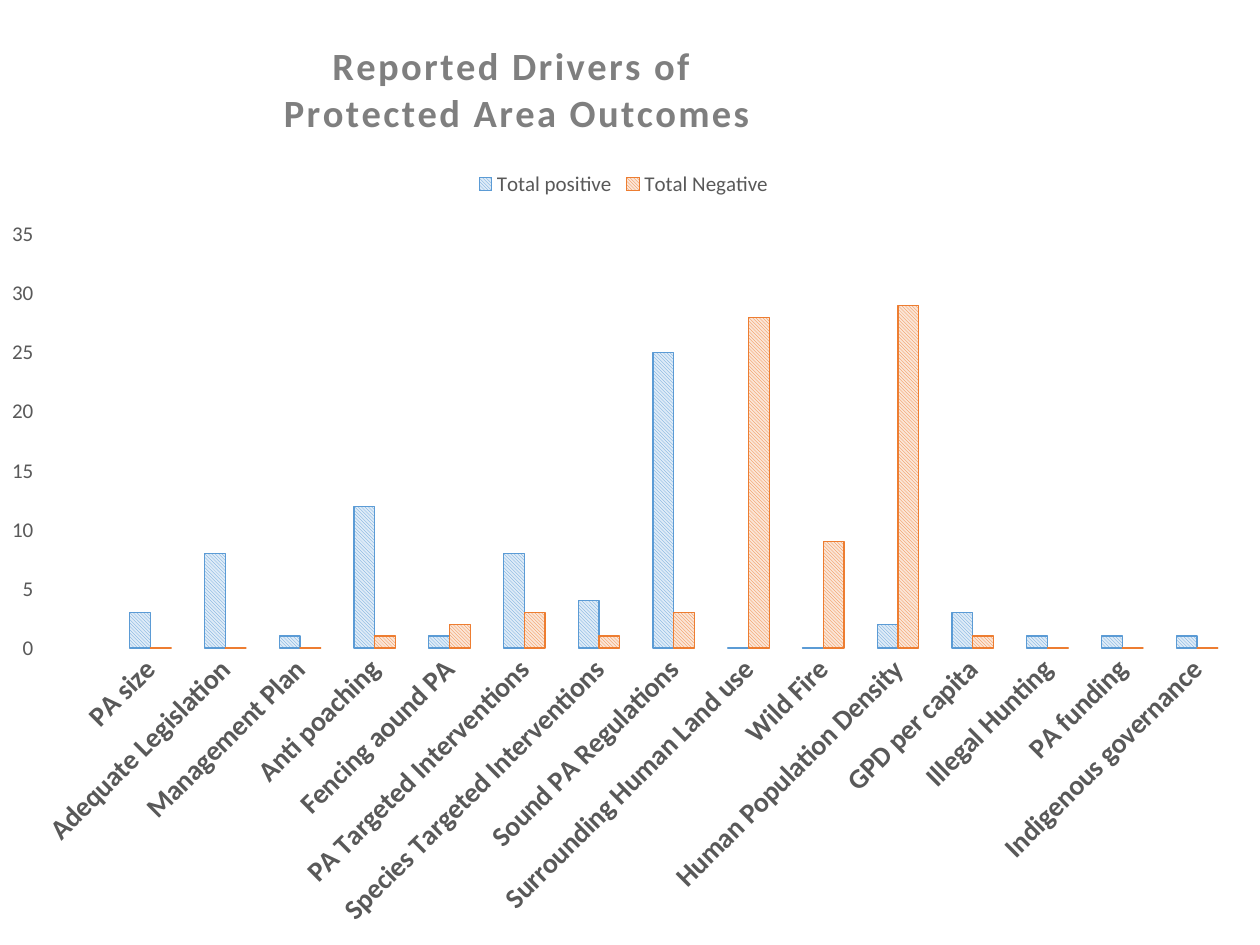
from dataclasses import dataclass

from lxml import etree
from pptx import Presentation
from pptx.chart.data import CategoryChartData
from pptx.dml.color import RGBColor
from pptx.enum.chart import XL_CHART_TYPE, XL_LEGEND_POSITION, XL_TICK_MARK
from pptx.enum.dml import MSO_PATTERN
from pptx.oxml.ns import qn
from pptx.util import Inches, Pt

COLUMN = XL_CHART_TYPE.COLUMN_CLUSTERED
TOP = XL_LEGEND_POSITION.TOP
NO_TICK = XL_TICK_MARK.NONE
HATCH = MSO_PATTERN.LIGHT_DOWNWARD_DIAGONAL

TITLE = ["Reported Drivers of ", "Protected Area Outcomes"]
DRIVERS = [
    ("", None, None),
    ("PA size", 3, 0),
    ("Adequate Legislation", 8, 0),
    ("Management Plan", 1, 0),
    ("Anti poaching", 12, 1),
    ("Fencing aound PA", 1, 2),
    ("PA Targeted Interventions", 8, 3),
    ("Species Targeted Interventions", 4, 1),
    ("Sound PA Regulations", 25, 3),
    ("Surrounding Human Land use", 0, 28),
    ("Wild Fire", 0, 9),
    ("Human Population Density", 2, 29),
    ("GPD per capita", 3, 1),
    ("Illegal Hunting", 1, 0),
    ("PA funding", 1, 0),
    ("Indigenous governance", 1, 0),
]


@dataclass(frozen=True)
class Theme:
    font: str = "Calibri"
    title: str = "7F7F7F"
    text: str = "595959"
    bars: tuple = (("5B9BD5", "DEEBF7"), ("ED7D31", "FBE5D6"))
    title_size: int = 22
    label_size: int = 16
    text_size: int = 12


class Deck:
    def __init__(self, theme, width, height):
        self.theme = theme
        self.prs = Presentation()
        self.prs.slide_width = Inches(width)
        self.prs.slide_height = Inches(height)
        self.slide = self.prs.slides.add_slide(self.prs.slide_layouts[6])

    def style(self, font, size, color, bold=False):
        font.name = self.theme.font
        font.size = Pt(size)
        font.bold = bold
        font.color.rgb = RGBColor.from_string(color)

    def place(self, item, after=None, inner=False, **shares):
        for old in item.findall(qn("c:layout")):
            item.remove(old)
        layout = etree.Element(qn("c:layout"))
        manual = etree.SubElement(layout, qn("c:manualLayout"))
        if inner:
            etree.SubElement(manual, qn("c:layoutTarget")).set("val", "inner")
        for side in "xy":
            etree.SubElement(manual, qn(f"c:{side}Mode")).set("val", "edge")
        for side, share in shares.items():
            etree.SubElement(manual, qn(f"c:{side}")).set("val", str(share))
        if after:
            item.find(qn(after)).addnext(layout)
        else:
            item.insert(0, layout)

    def chart(self, names, rows, x, y, w, h):
        data = CategoryChartData()
        cats, *cols = zip(*rows)
        data.categories = cats
        for name, vals in zip(names, cols):
            data.add_series(name, vals)
        wide, high = self.prs.slide_width, self.prs.slide_height
        chart = self.slide.shapes.add_chart(
            COLUMN, int(x * wide), int(y * high), int(w * wide), int(h * high), data
        ).chart
        self.style(chart.font, 10, "000000")
        plot = chart.plots[0]
        plot.gap_width, plot.overlap, plot.vary_by_categories = 160, 0, False
        for bar, (dark, light) in zip(plot.series, self.theme.bars):
            fill = bar.format.fill
            fill.patterned()
            fill.pattern = HATCH
            fill.fore_color.rgb = RGBColor.from_string(dark)
            fill.back_color.rgb = RGBColor.from_string(light)
            bar.format.line.color.rgb = RGBColor.from_string(dark)
            bar.format.line.width = Pt(0.75)
        area = chart._chartSpace.chart.plotArea
        self.place(area, inner=True, x=0.04, y=0.225, w=0.94, h=0.451)
        return chart

    def axis(self, axis, size, bold=False):
        axis.major_tick_mark = axis.minor_tick_mark = NO_TICK
        axis.has_major_gridlines = False
        axis.format.line.fill.background()
        self.style(axis.tick_labels.font, size, self.theme.text, bold)

    def axes(self, chart):
        cat, val = chart.category_axis, chart.value_axis
        self.axis(cat, self.theme.label_size, True)
        cat._element.txPr.bodyPr.set("rot", "-2700000")
        self.axis(val, self.theme.text_size)
        val.minimum_scale, val.maximum_scale, val.major_unit = 0, 35, 5

    def title(self, chart, lines):
        chart.has_title = True
        title = chart.chart_title
        frame = title.text_frame
        for i, line in enumerate(lines):
            para = frame.add_paragraph() if i else frame.paragraphs[0]
            run = para.add_run()
            run.text = line
            self.style(run.font, self.theme.title_size, self.theme.title, True)
            run.font._element.set("spc", "150")
        self.place(title._element, "c:tx", x=0.23, y=0.01)

    def legend(self, chart):
        chart.has_legend = True
        key = chart.legend
        key.position = TOP
        key.include_in_layout = False
        self.style(key.font, self.theme.text_size, self.theme.text)
        self.place(key._element, "c:legendPos", x=0.38, y=0.15, w=0.24, h=0.04)


def main():
    deck = Deck(Theme(), 10, 7.5)
    names = ["Total positive", "Total Negative"]
    chart = deck.chart(names, DRIVERS, -0.01, 0.03, 1.01, 0.97)
    deck.axes(chart)
    deck.title(chart, TITLE)
    deck.legend(chart)
    deck.prs.save("out.pptx")


if __name__ == "__main__":
    main()
